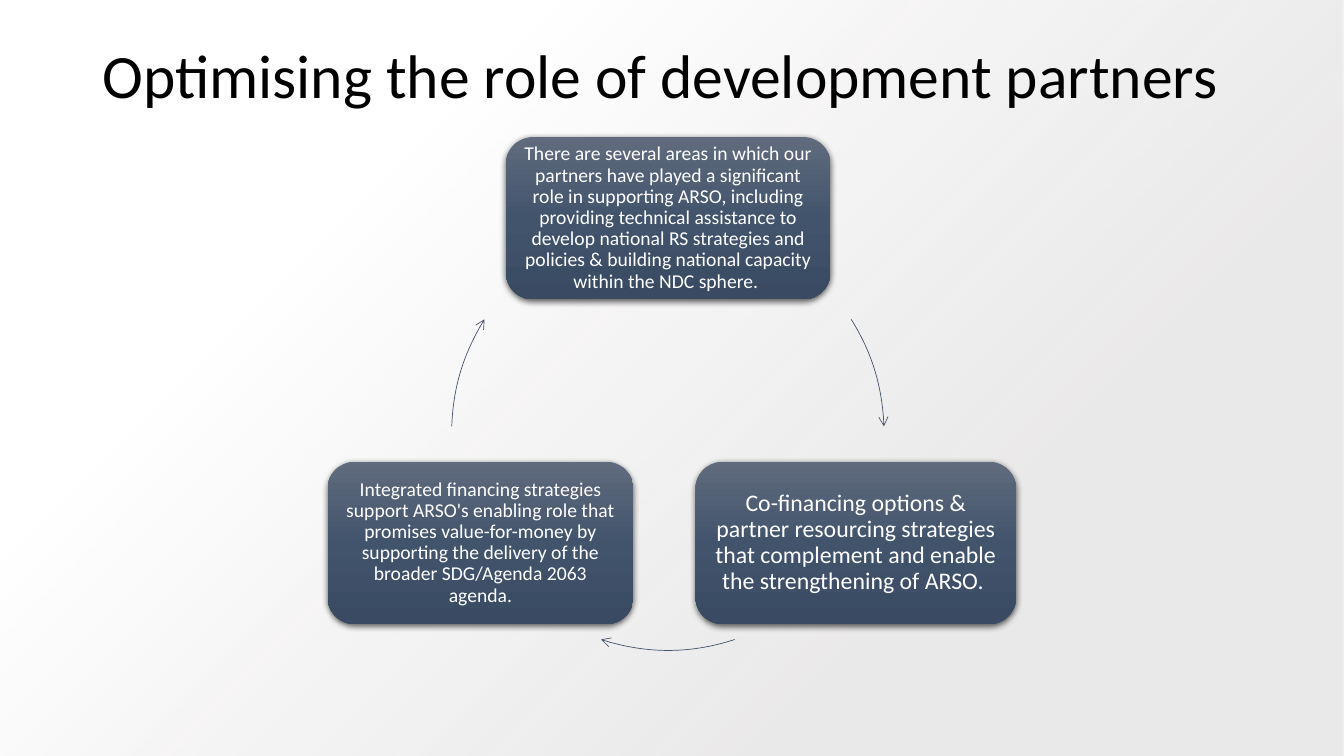
from dataclasses import dataclass
from math import cos, radians, sin, tan

from lxml.etree import SubElement
from pptx import Presentation
from pptx.dml.color import RGBColor
from pptx.enum.shapes import MSO_SHAPE
from pptx.enum.text import MSO_ANCHOR, PP_ALIGN
from pptx.oxml import parse_xml
from pptx.oxml.ns import nsdecls, qn
from pptx.util import Pt


@dataclass(frozen=True)
class Theme:
    font: str = "Calibri"
    title_size: float = 44
    large_size: float = 17
    small_size: float = 14
    line_spacing: float = 0.9
    title_color: str = "000000"
    card_text: str = "FFFFFF"
    arrow_color: str = "44546A"
    # Gradient stops: position %, colour, opacity %
    backdrop: tuple = ((28, "E7E6E6", 84), (74, "FFFFFF", 100))
    card: tuple = ((0, "606B7D", 100), (50, "42546C", 100), (100, "394A62", 100))


@dataclass(frozen=True)
class Box:
    left: float
    top: float
    width: float
    height: float

    def lengths(self):
        return Pt(self.left), Pt(self.top), Pt(self.width), Pt(self.height)


THEME = Theme()
PAGE = Box(0, 0, 960, 540)
LINEAR_DOWN = '<a:lin ang="5400000" scaled="0"/>'
FROM_CORNER = ('<a:path path="circle"><a:fillToRect l="100000" t="100000"/></a:path>'
               '<a:tileRect r="-100000" b="-100000"/>')

# Card box, type size, text margin, wording
CARDS = (
    (Box(361.4, 97.9, 231.8, 115.9), THEME.small_size, 4.3,
     "There are several areas in which our partners have played a significant role in "
     "supporting ARSO, including providing technical assistance to develop national RS "
     "strategies and policies & building national capacity within the NDC sphere. "),
    (Box(496.8, 329.8, 229, 115.9), THEME.large_size, 5,
     "Co-financing options & partner resourcing strategies that complement and enable "
     "the strengthening of ARSO. "),
    (Box(234, 329.8, 218.5, 115.9), THEME.small_size, 4.3,
     "Integrated financing strategies support ARSO's enabling role that promises "
     "value-for-money by supporting the delivery of the broader SDG/Agenda 2063 agenda."),
)
RING = Box(322.6, 155.5, 308.9, 308.9)
ARC_ANGLES = ((-32, -2), (72, 108), (182, 212))  # clockwise from the right


def fill_gradient(shape, stops, direction):
    """Fill a shape with any number of stops."""
    stop_xml = "".join(
        f'<a:gs pos="{position * 1000}"><a:srgbClr val="{color}">'
        f'<a:alpha val="{opacity * 1000}"/></a:srgbClr></a:gs>'
        for position, color, opacity in stops)
    gradient = parse_xml(f'<a:gradFill {nsdecls("a")} rotWithShape="1">'
                         f'<a:gsLst>{stop_xml}</a:gsLst>{direction}</a:gradFill>')
    shape.fill.gradient()
    properties = shape.element.spPr
    properties.replace(properties.find(qn("a:gradFill")), gradient)


def write_text(shape, text, size, color, align, anchor):
    frame = shape.text_frame
    frame.word_wrap = True
    frame.vertical_anchor = anchor
    frame.text = text
    para = frame.paragraphs[0]
    para.alignment = align
    para.line_spacing = THEME.line_spacing
    font = para.runs[0].font
    font.name = THEME.font
    font.size = Pt(size)
    font.color.rgb = RGBColor.from_string(color)


def add_panel(page, kind, box, stops, direction):
    panel = page.shapes.add_shape(kind, *box.lengths())
    panel.shadow.inherit = False
    fill_gradient(panel, stops, direction)
    panel.line.fill.background()
    return panel


def add_title(page, box, text):
    title = page.shapes.add_textbox(*box.lengths())
    write_text(title, text, THEME.title_size, THEME.title_color,
               PP_ALIGN.LEFT, MSO_ANCHOR.TOP)


def add_card(page, box, size, margin, text):
    card = add_panel(page, MSO_SHAPE.ROUNDED_RECTANGLE, box, THEME.card, LINEAR_DOWN)
    # Soft shadow below the card
    effects = card.element.spPr.find(qn("a:effectLst"))
    shadow = SubElement(effects, qn("a:outerShdw"), blurRad=str(Pt(4.5)),
                        dist=str(Pt(1.5)), dir="5400000", rotWithShape="0")
    color = SubElement(shadow, qn("a:srgbClr"), val="000000")
    SubElement(color, qn("a:alpha"), val="63000")
    frame = card.text_frame
    frame.margin_left = frame.margin_right = Pt(margin)
    frame.margin_top = frame.margin_bottom = Pt(margin)
    write_text(card, text, size, THEME.card_text, PP_ALIGN.CENTER, MSO_ANCHOR.MIDDLE)


def arc_points(box, start, end):
    """Bezier points of a circular arc inscribed in the box."""
    radius = box.width / 2
    center_x, center_y = box.left + radius, box.top + radius
    first, last = radians(start), radians(end)
    reach = 4 / 3 * tan((last - first) / 4)

    def place(angle, along):
        return (Pt(center_x + radius * (cos(angle) - along * sin(angle))),
                Pt(center_y + radius * (sin(angle) + along * cos(angle))))

    return place(first, 0), place(first, reach), place(last, -reach), place(last, 0)


def add_arc_arrow(page, box, start, end):
    first, *others = arc_points(box, start, end)
    left, top, width, height = box.lengths()
    # The two corners give the outline the extent of the whole ring
    builder = page.shapes.build_freeform(left, top)
    builder.move_to(left + width, top + height)
    builder.move_to(*first)
    builder.add_line_segments(others, close=False)
    arrow = builder.convert_to_shape()
    outline = next(arrow.element.iter(qn("a:path")))
    for corner in outline.findall(qn("a:moveTo"))[:2]:
        outline.remove(corner)
    # Join the three segments into one curve
    segments = outline.findall(qn("a:lnTo"))
    curve = SubElement(outline, qn("a:cubicBezTo"))
    for segment in segments:
        curve.append(segment[0])
        outline.remove(segment)
    arrow.shadow.inherit = False
    arrow.fill.background()
    arrow.line.width = Pt(0.5)
    arrow.line.color.rgb = RGBColor.from_string(THEME.arrow_color)
    SubElement(arrow.element.spPr.find(qn("a:ln")), qn("a:tailEnd"), type="arrow")


def add_cycle(page, ring):
    for card, angles in zip(CARDS, ARC_ANGLES):
        add_card(page, *card)
        add_arc_arrow(page, ring, *angles)


def main():
    deck = Presentation()
    deck.slide_width, deck.slide_height = Pt(PAGE.width), Pt(PAGE.height)
    page = deck.slides.add_slide(deck.slide_layouts[6])
    add_panel(page, MSO_SHAPE.RECTANGLE, PAGE, THEME.backdrop, FROM_CORNER)
    add_title(page, Box(66, 28.8, 828, 104.4),
              "Optimising the role of development partners")
    add_cycle(page, RING)
    deck.save("out.pptx")


if __name__ == "__main__":
    main()
